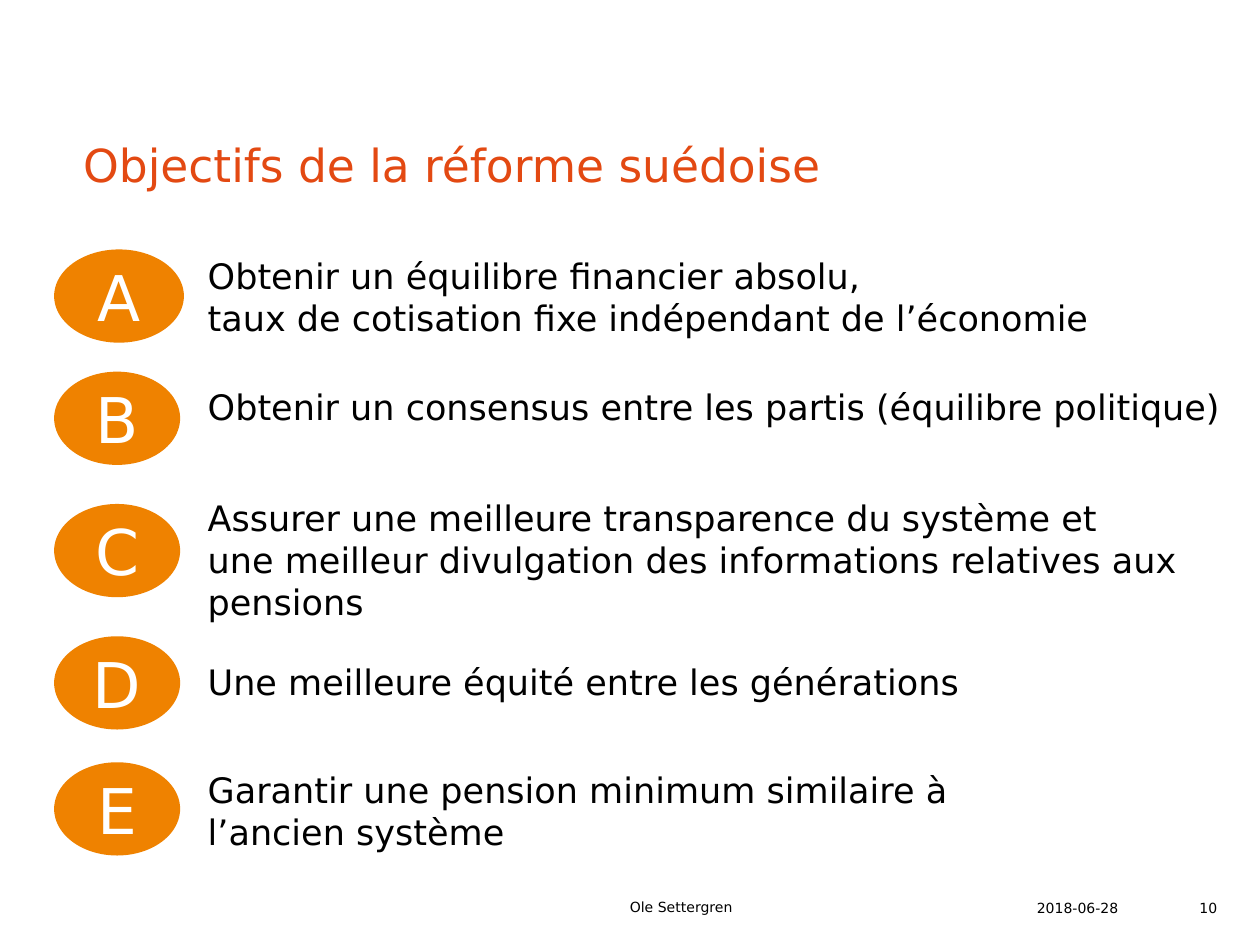
"""Build the slide listing the goals of the Swedish pension reform."""
from pptx import Presentation
from pptx.dml.color import RGBColor
from pptx.enum.shapes import MSO_SHAPE as Shape
from pptx.enum.text import MSO_ANCHOR as Anchor, PP_ALIGN as Align
from pptx.util import Inches, Pt

FONT = "DejaVu Sans"
HEX = {"title": "E34912", "oval": "EF8200", "ink": "000000", "pale": "FFFFFF"}
TITLE = "Objectifs de la réforme suédoise"
GOALS = [
    ("A", 1.98, 1.03, 1.97, 7.25,
     ["Obtenir un équilibre financier absolu,",
      "taux de cotisation fixe indépendant de l’économie"]),
    ("B", 2.95, 1, 3.01, 8.65,
     ["Obtenir un consensus entre les partis (équilibre politique)"]),
    ("C", 4, 1, 3.89, 8.05,
     ["Assurer une meilleure transparence du système et",
      "une meilleur divulgation des informations relatives aux",
      "pensions"]),
    ("D", 5.05, 1, 5.19, 6.33,
     ["Une meilleure équité entre les générations"]),
    ("E", 6.05, 1, 6.05, 8.12,
     ["Garantir une pension minimum similaire à", "l’ancien système"]),
]
FOOT = [
    ("Ole Settergren", 4.9, 3.15, Anchor.MIDDLE, Align.LEFT),
    ("2018-06-28", 8.13, 0.98, Anchor.BOTTOM, Align.LEFT),
    ("10", 9.19, 0.57, Anchor.BOTTOM, Align.RIGHT),
]
OVAL_X, OVAL_H, TEXT_X = 0.43, 0.74, 1.55
LINE_H, PAD_H = 0.335, 0.1
FOOT_Y, FOOT_H = 7.08, 0.24


def box(*rect):
    return [Inches(part) for part in rect]


def write(frame, lines, size, tint, align=Align.LEFT, anchor=Anchor.TOP):
    frame.word_wrap = True
    frame.vertical_anchor = anchor
    for i, line in enumerate(lines):
        para = frame.add_paragraph() if i else frame.paragraphs[0]
        para.alignment = align
        run = para.add_run()
        run.text = line
        run.font.name = FONT
        run.font.size = Pt(size)
        run.font.color.rgb = RGBColor.from_string(HEX[tint])


def add_goal(slide, letter, oval_y, oval_w, text_y, text_w, lines):
    group = slide.shapes.add_group_shape()
    oval = group.shapes.add_shape(
        Shape.OVAL, *box(OVAL_X, oval_y, oval_w, OVAL_H))
    oval.shadow.inherit = False
    oval.fill.solid()
    oval.fill.fore_color.rgb = RGBColor.from_string(HEX["oval"])
    oval.line.fill.background()
    write(oval.text_frame, [letter], 36, "pale", Align.CENTER, Anchor.MIDDLE)
    oval.text_frame.word_wrap = False
    text = group.shapes.add_textbox(
        *box(TEXT_X, text_y, text_w, PAD_H + LINE_H * len(lines)))
    write(text.text_frame, lines, 20, "ink")


def main():
    deck = Presentation()
    deck.slide_width, deck.slide_height = box(10, 7.5)
    slide = deck.slides.add_slide(deck.slide_layouts[5])

    title = slide.shapes.title
    title.left, title.top, title.width, title.height = box(
        0.56, 1.08, 8.87, 0.91)
    frame = title.text_frame
    write(frame, [TITLE], 26, "title", anchor=Anchor.BOTTOM)
    frame.margin_bottom = Inches(0.47)
    frame.paragraphs[0].line_spacing = Pt(30)

    for goal in GOALS:
        add_goal(slide, *goal)
    for text, x, w, anchor, align in FOOT:
        note = slide.shapes.add_textbox(*box(x, FOOT_Y, w, FOOT_H))
        write(note.text_frame, [text], 8, "ink", align, anchor)
    deck.save("out.pptx")


if __name__ == "__main__":
    main()
